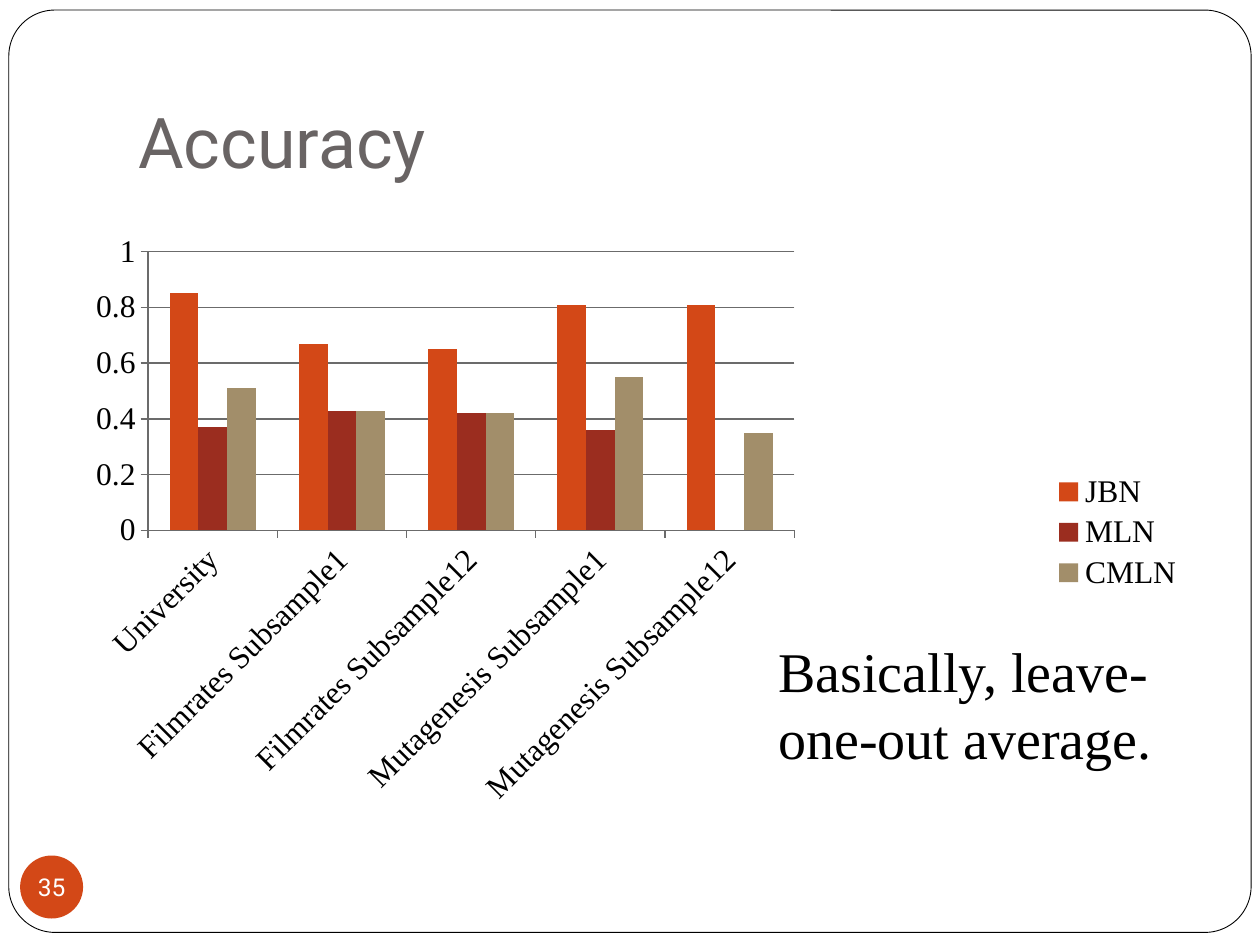
from pptx import Presentation
from pptx.chart.data import CategoryChartData
from pptx.dml.color import RGBColor
from pptx.enum.chart import XL_CHART_TYPE, XL_LEGEND_POSITION, XL_TICK_MARK
from pptx.enum.shapes import MSO_SHAPE
from pptx.enum.text import MSO_ANCHOR, PP_ALIGN
from pptx.util import Inches, Pt
from lxml import etree

BLACK = RGBColor(0x00, 0x00, 0x00)
WHITE = RGBColor(0xFF, 0xFF, 0xFF)
GRAY = RGBColor(0x69, 0x64, 0x64)
AXIS = RGBColor(0x6B, 0x6B, 0x6B)
ORANGE = RGBColor(0xD3, 0x48, 0x17)
RED = RGBColor(0x9B, 0x2D, 0x1F)
TAN = RGBColor(0xA2, 0x8E, 0x6A)
SANS, SERIF = "Roboto", "Times New Roman"

prs = Presentation()
prs.slide_width, prs.slide_height = Inches(10), Inches(7.5)
slide = prs.slides.add_slide(prs.slide_layouts[6])
W, H = prs.slide_width, prs.slide_height


def box(x, y, w, h):
    """Turn shares of the slide's size into a position and size."""
    return int(W * x), int(H * y), int(W * w), int(H * h)


def write(sp, text, size, name, color):
    tf = sp.text_frame
    tf.word_wrap = True
    p = tf.paragraphs[0]
    p.text = text
    p.font.size, p.font.name = Pt(size), name
    p.font.color.rgb = color
    return tf


# Rounded frame
frame = slide.shapes.add_shape(MSO_SHAPE.ROUNDED_RECTANGLE, Inches(0.07), Inches(0.08),
                               Inches(9.86), Inches(7.32))
frame.adjustments[0] = 0.05
frame.shadow.inherit = False
frame.fill.solid()
frame.fill.fore_color.rgb = WHITE
frame.line.color.rgb = BLACK
frame.line.width = Pt(0.5)

# Title
title = slide.shapes.add_textbox(*box(0.1, 0.04, 0.85, 1 / 6))
tf = write(title, "Accuracy", 40, SANS, GRAY)
tf.vertical_anchor = MSO_ANCHOR.BOTTOM
tf.margin_bottom = Inches(0.1)

# Accuracy chart
data = CategoryChartData()
data.categories = ["University", "Filmrates Subsample1", "Filmrates Subsample12",
                   "Mutagenesis Subsample1", "Mutagenesis Subsample12"]
series = [
    ("JBN", (0.85, 0.67, 0.65, 0.81, 0.81), ORANGE),
    ("MLN", (0.37, 0.43, 0.42, 0.36, None), RED),
    ("CMLN", (0.51, 0.43, 0.42, 0.55, 0.35), TAN),
]
for name, values, _ in series:
    data.add_series(name, values)
chart = slide.shapes.add_chart(XL_CHART_TYPE.COLUMN_CLUSTERED,
                               *box(0.05, 7 / 30, 0.9, 0.66), data).chart
chart.has_title = False
chart.font.size, chart.font.name = Pt(18), SERIF
chart.font.color.rgb = BLACK
chart.has_legend = True
chart.legend.position = XL_LEGEND_POSITION.RIGHT
chart.legend.include_in_layout = False

plot = chart.plots[0]
plot.gap_width, plot.overlap = 150, 0
plot.vary_by_categories = False
for ser, (_, _, color) in zip(plot.series, series):
    ser.format.fill.solid()
    ser.format.fill.fore_color.rgb = color

# Axes and gridlines
cat, val = chart.category_axis, chart.value_axis
val.minimum_scale, val.maximum_scale, val.major_unit = 0, 1, 0.2
val.has_major_gridlines = True
val.tick_labels.number_format = "General"
val.tick_labels.number_format_is_linked = False
for axis in (cat, val):
    axis.major_tick_mark = XL_TICK_MARK.OUTSIDE
    axis.tick_labels.font.size = Pt(18)
for part in (cat, val, val.major_gridlines):
    part.format.line.color.rgb = AXIS
    part.format.line.width = Pt(0.75)

# Slanted category labels
slant = cat._element.find(".//{*}txPr/{*}bodyPr")
slant.set("rot", str(-45 * 60000))
slant.set("vert", "horz")

# Fixed inner plot area
area = chart._chartSpace.find(".//{*}plotArea")
ns = etree.QName(area).namespace
for old in area.findall("{*}layout"):
    area.remove(old)
layout = etree.Element(f"{{{ns}}}layout")
manual = etree.SubElement(layout, f"{{{ns}}}manualLayout")
for tag, value in (("layoutTarget", "inner"), ("xMode", "edge"), ("yMode", "edge"),
                   ("x", 0.075), ("y", 0.05), ("w", 0.57), ("h", 0.447)):
    etree.SubElement(manual, f"{{{ns}}}{tag}").set("val", str(value))
area.insert(0, layout)

# Slide number badge
badge = slide.shapes.add_shape(MSO_SHAPE.OVAL, Inches(0.16), Inches(6.79),
                               Inches(0.5), Inches(0.5))
badge.shadow.inherit = False
badge.fill.solid()
badge.fill.fore_color.rgb = ORANGE
badge.line.fill.background()
tf = write(badge, "35", 14, SANS, WHITE)
tf.word_wrap = False
tf.vertical_anchor = MSO_ANCHOR.MIDDLE
tf.margin_left = tf.margin_right = tf.margin_top = tf.margin_bottom = 0
tf.paragraphs[0].alignment = PP_ALIGN.CENTER

# Remark beside the chart
remark = slide.shapes.add_textbox(*box(0.608, 2 / 3, 0.317, 0.157))
write(remark, "Basically, leave-one-out average.", 32, SERIF, BLACK)

prs.save("out.pptx")
